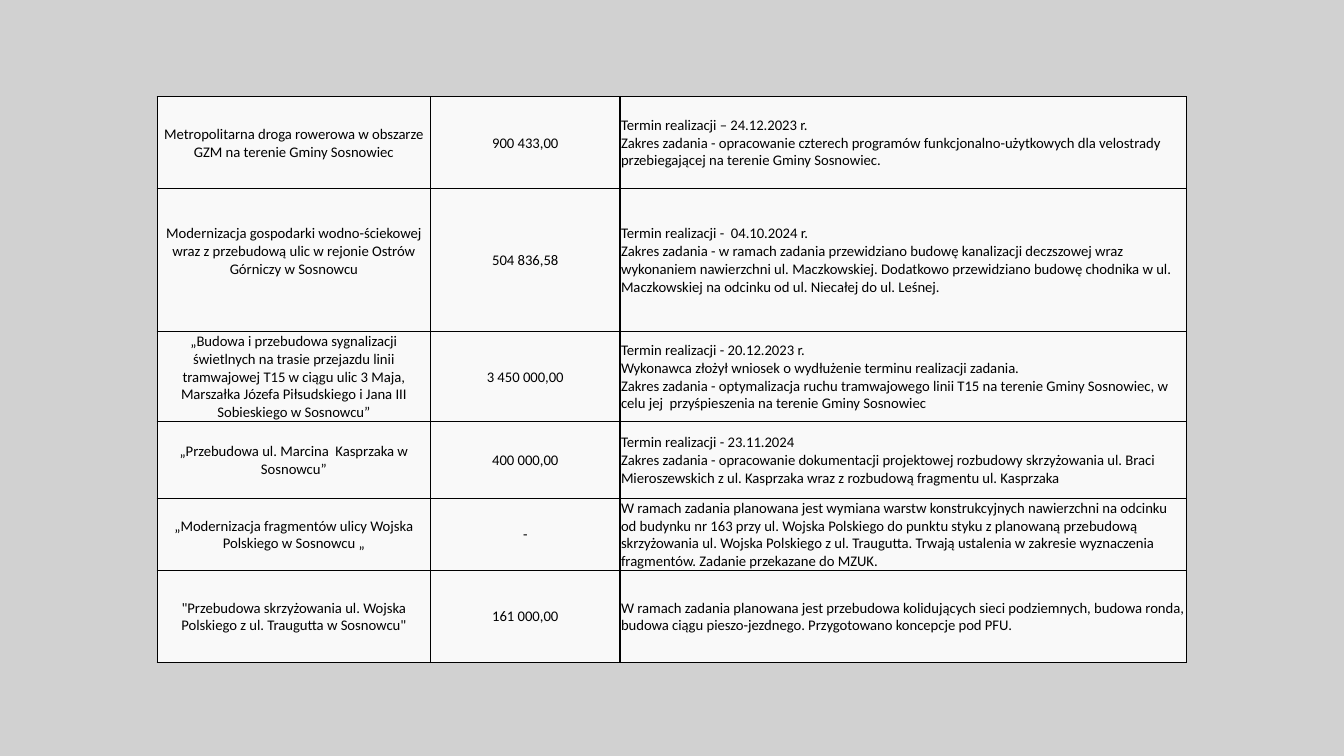
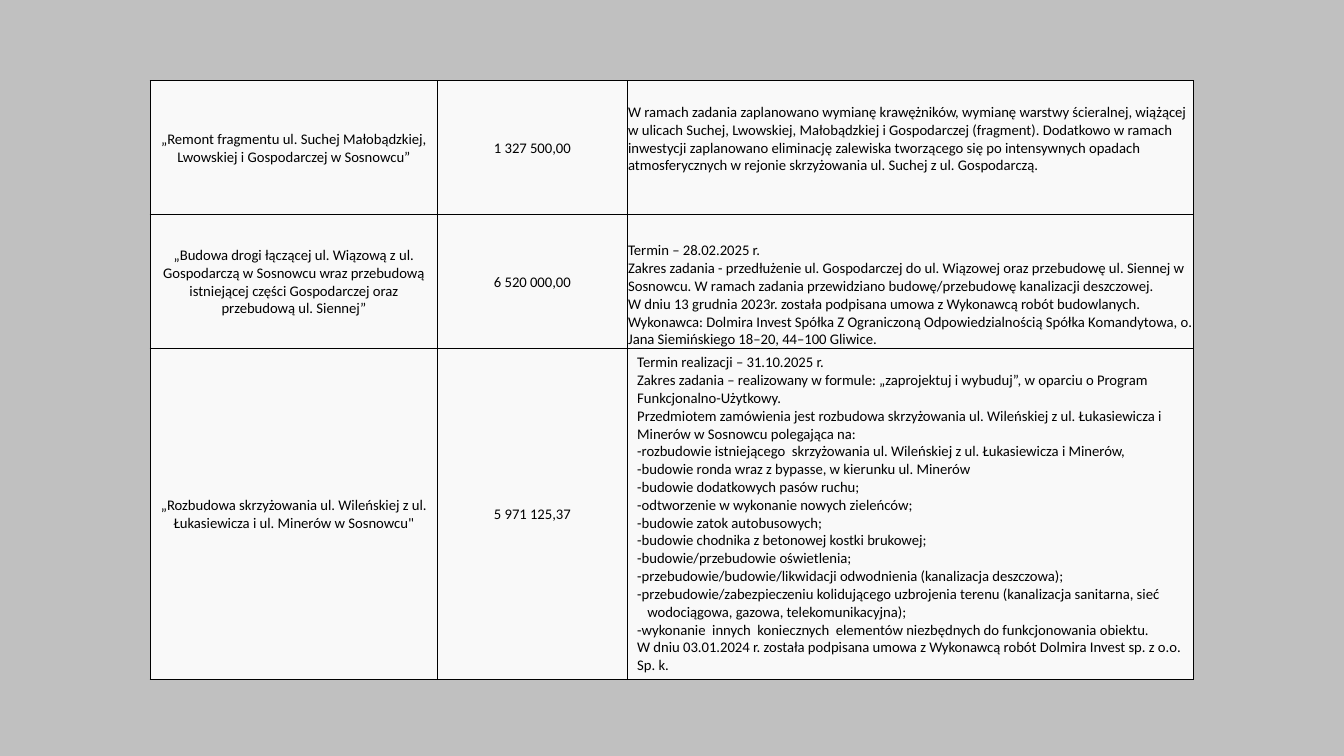
from lxml import etree
from pptx import Presentation
from pptx.dml.color import RGBColor
from pptx.enum.text import MSO_ANCHOR, PP_ALIGN
from pptx.oxml.ns import qn
from pptx.util import Inches, Pt

MIDDLE, BOTTOM = MSO_ANCHOR.MIDDLE, MSO_ANCHOR.BOTTOM
CENTER, LEFT = PP_ALIGN.CENTER, PP_ALIGN.LEFT
COLORS = {"light": "D1D1D1", "dark": "C0C0C0", "cell": "F9F9F9", "ink": "000000"}
FONT = {"name": "Calibri", "size": Pt(10.5), "bold": False}
ALIGN = (CENTER, CENTER, LEFT)
FLAGS = {"first_row": False, "horz_banding": False}
TIGHT = {
    "vertical_anchor": MIDDLE,
    "margin_left": Inches(0.01),
    "margin_right": Inches(0.01),
    "margin_top": Inches(0.01),
    "margin_bottom": 0,
}
ROOMY = {
    "margin_left": Inches(0.1),
    "margin_right": Inches(0.1),
    "margin_top": Inches(0.05),
    "margin_bottom": Inches(0.05),
}
RAISED = {"margin_bottom": Inches(0.18)}
LOW = {"vertical_anchor": BOTTOM}
INDENT = ">"

ROADS = [
    (0.91, (
        ["Metropolitarna droga rowerowa w obszarze GZM na terenie Gminy Sosnowiec"],
        ["900 433,00"],
        ["Termin realizacji – 24.12.2023 r.",
         "Zakres zadania - opracowanie czterech programów funkcjonalno-użytkowych dla "
         "velostrady przebiegającej na terenie Gminy Sosnowiec."],
    ), {}),
    (1.42, (
        ["Modernizacja gospodarki wodno-ściekowej wraz z przebudową ulic w rejonie "
         "Ostrów Górniczy w Sosnowcu"],
        ["504 836,58"],
        ["Termin realizacji -  04.10.2024 r.",
         "Zakres zadania - w ramach zadania przewidziano budowę kanalizacji deczszowej "
         "wraz wykonaniem nawierzchni ul. Maczkowskiej. Dodatkowo przewidziano budowę "
         "chodnika w ul. Maczkowskiej na odcinku od ul. Niecałej do ul. Leśnej."],
    ), {0: RAISED}),
    (0.84, (
        ["„Budowa i przebudowa sygnalizacji świetlnych na trasie przejazdu linii "
         "tramwajowej T15 w ciągu ulic 3 Maja, Marszałka Józefa Piłsudskiego i Jana III "
         "Sobieskiego w Sosnowcu”"],
        ["3 450 000,00"],
        ["Termin realizacji - 20.12.2023 r.",
         "Wykonawca złożył wniosek o wydłużenie terminu realizacji zadania.",
         "Zakres zadania - optymalizacja ruchu tramwajowego linii T15 na terenie Gminy "
         "Sosnowiec, w celu jej  przyśpieszenia na terenie Gminy Sosnowiec"],
    ), {}),
    (0.76, (
        ["„Przebudowa ul. Marcina  Kasprzaka w Sosnowcu”"],
        ["400 000,00"],
        ["Termin realizacji - 23.11.2024",
         "Zakres zadania - opracowanie dokumentacji projektowej rozbudowy skrzyżowania "
         "ul. Braci Mieroszewskich z ul. Kasprzaka wraz z rozbudową fragmentu "
         "ul. Kasprzaka"],
    ), {}),
    (0.66, (
        ["„Modernizacja fragmentów ulicy Wojska Polskiego w Sosnowcu „"],
        ["-"],
        ["W ramach zadania planowana jest wymiana warstw konstrukcyjnych nawierzchni na "
         "odcinku od budynku nr 163 przy ul. Wojska Polskiego do punktu styku z planowaną "
         "przebudową skrzyżowania ul. Wojska Polskiego z ul. Traugutta. Trwają ustalenia "
         "w zakresie wyznaczenia fragmentów. Zadanie przekazane do MZUK."],
    ), {}),
    (0.91, (
        ["\"Przebudowa skrzyżowania ul. Wojska Polskiego z ul. Traugutta w Sosnowcu\""],
        ["161 000,00"],
        ["W ramach zadania planowana jest przebudowa kolidujących sieci podziemnych, "
         "budowa ronda, budowa ciągu pieszo-jezdnego. Przygotowano koncepcje pod PFU."],
    ), {}),
]

STREETS = [
    (1.33, (
        ["„Remont fragmentu ul. Suchej Małobądzkiej, Lwowskiej i Gospodarczej "
         "w Sosnowcu”"],
        ["1 327 500,00"],
        ["W ramach zadania zaplanowano wymianę krawężników, wymianę warstwy ścieralnej, "
         "wiążącej w ulicach Suchej, Lwowskiej, Małobądzkiej i Gospodarczej (fragment). "
         "Dodatkowo w ramach inwestycji zaplanowano eliminację zalewiska tworzącego się "
         "po intensywnych opadach atmosferycznych w rejonie skrzyżowania ul. Suchej "
         "z ul. Gospodarczą."],
    ), {2: RAISED}),
    (1.33, (
        ["„Budowa drogi łączącej ul. Wiązową z ul. Gospodarczą w Sosnowcu wraz "
         "przebudową istniejącej części Gospodarczej oraz przebudową ul. Siennej”"],
        ["6 520 000,00"],
        ["Termin – 28.02.2025 r.",
         "Zakres zadania - przedłużenie ul. Gospodarczej do ul. Wiązowej oraz przebudowę "
         "ul. Siennej w Sosnowcu. W ramach zadania przewidziano budowę/przebudowę "
         "kanalizacji deszczowej.",
         "W dniu 13 grudnia 2023r. została podpisana umowa z Wykonawcą robót budowlanych. "
         "Wykonawca: Dolmira Invest Spółka Z Ograniczoną Odpowiedzialnością Spółka "
         "Komandytowa, o. Jana Siemińskiego 18–20, 44–100 Gliwice."],
    ), {2: LOW}),
    (3.1, (
        ["„Rozbudowa skrzyżowania ul. Wileńskiej z ul. Łukasiewicza i ul. Minerów "
         "w Sosnowcu\""],
        ["5 971 125,37"],
        ["Termin realizacji – 31.10.2025 r.",
         "Zakres zadania – realizowany w formule: „zaprojektuj i wybuduj”, w oparciu "
         "o Program Funkcjonalno-Użytkowy.",
         "Przedmiotem zamówienia jest rozbudowa skrzyżowania ul. Wileńskiej "
         "z ul. Łukasiewicza i Minerów w Sosnowcu polegająca na:",
         "-rozbudowie istniejącego  skrzyżowania ul. Wileńskiej z ul. Łukasiewicza "
         "i Minerów,",
         "-budowie ronda wraz z bypasse, w kierunku ul. Minerów",
         "-budowie dodatkowych pasów ruchu;",
         "-odtworzenie w wykonanie nowych zieleńców;",
         "-budowie zatok autobusowych;",
         "-budowie chodnika z betonowej kostki brukowej;",
         "-budowie/przebudowie oświetlenia;",
         "-przebudowie/budowie/likwidacji odwodnienia (kanalizacja deszczowa);",
         "-przebudowie/zabezpieczeniu kolidującego uzbrojenia terenu (kanalizacja "
         "sanitarna, sieć",
         ">wodociągowa, gazowa, telekomunikacyjna);",
         "-wykonanie  innych  koniecznych  elementów niezbędnych do funkcjonowania "
         "obiektu.",
         "W dniu 03.01.2024 r. została podpisana umowa z Wykonawcą robót Dolmira Invest "
         "sp. z o.o. Sp. k."],
    ), {0: ROOMY, 2: ROOMY}),
]


def apply(item, values):
    for name, value in values.items():
        setattr(item, name, value)


def paint(fill, color):
    fill.solid()
    fill.fore_color.rgb = RGBColor.from_string(COLORS[color])


def border(cell):
    props = cell._tc.get_or_add_tcPr()
    for side in ("lnL", "lnR", "lnT", "lnB"):
        line = etree.SubElement(props, qn(f"a:{side}"), w=str(Pt(1)))
        solid = etree.SubElement(line, qn("a:solidFill"))
        etree.SubElement(solid, qn("a:srgbClr"), val=COLORS["ink"])


def write(cell, lines, align, extra):
    border(cell)
    paint(cell.fill, "cell")
    apply(cell, TIGHT | extra)
    frame = cell.text_frame
    for index, line in enumerate(lines):
        para = frame.add_paragraph() if index else frame.paragraphs[0]
        para.alignment = align
        if line.startswith(INDENT):
            para._p.get_or_add_pPr().set("marL", str(Inches(0.1)))
        run = para.add_run()
        run.text = line.removeprefix(INDENT)
        apply(run.font, FONT)
        run.font.color.rgb = RGBColor.from_string(COLORS["ink"])


def grid(slide, left, top, widths, rows):
    height = sum(row[0] for row in rows)
    frame = slide.shapes.add_table(
        len(rows), len(widths),
        Inches(left), Inches(top), Inches(sum(widths)), Inches(height),
    )
    table = frame.table
    apply(table, FLAGS)
    for column, width in zip(table.columns, widths):
        column.width = Inches(width)
    for row, (tall, texts, extras) in zip(table.rows, rows):
        row.height = Inches(tall)
        for index, (cell, lines) in enumerate(zip(row.cells, texts)):
            write(cell, lines, ALIGN[index], extras.get(index, {}))


def page(deck, back, left, top, first, rows):
    slide = deck.slides.add_slide(deck.slide_layouts[6])
    paint(slide.background.fill, back)
    grid(slide, left, top, (first, 1.88, 5.62), rows)


def main():
    deck = Presentation()
    deck.slide_width, deck.slide_height = Inches(13.33), Inches(7.5)
    page(deck, "light", 1.56, 0.96, 2.71, ROADS)
    page(deck, "dark", 1.49, 0.8, 2.85, STREETS)
    deck.save("out.pptx")


if __name__ == "__main__":
    main()
